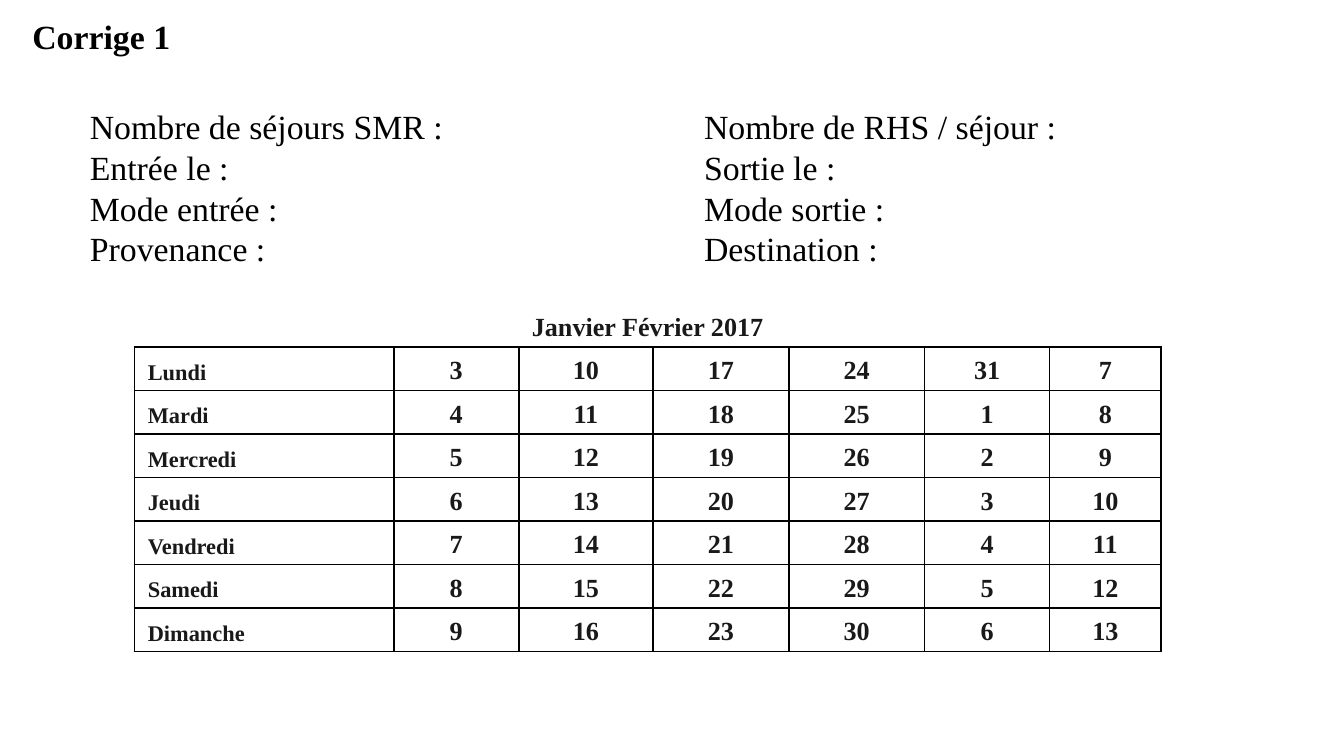
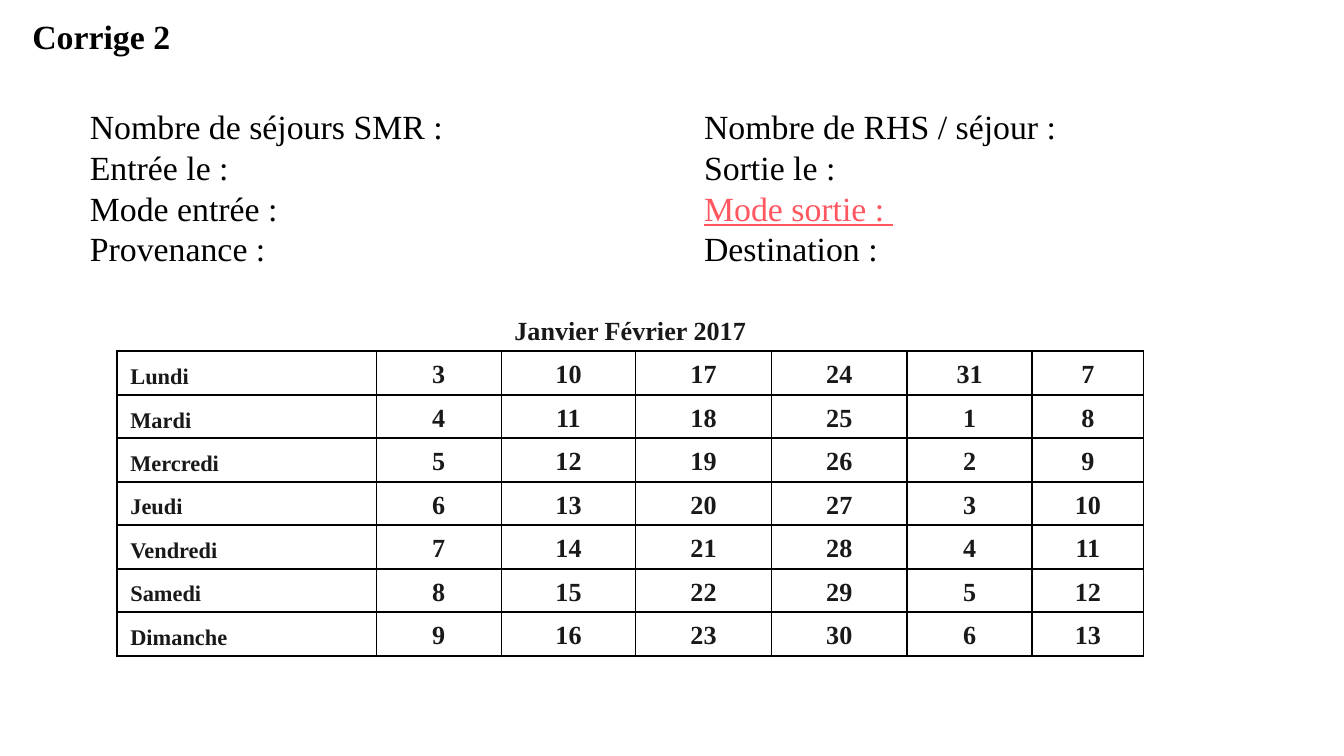
from lxml.etree import SubElement
from pptx import Presentation
from pptx.dml.color import RGBColor
from pptx.enum.text import MSO_ANCHOR, MSO_AUTO_SIZE, PP_ALIGN
from pptx.oxml.ns import qn
from pptx.util import Inches, Pt

COLOURS = {"text": "000000", "calendar": "191919", "alert": "FF5660", "border": "000000"}
FONT = "Times New Roman"
BODY_SIZE = 18.1

DAYS = ["Lundi", "Mardi", "Mercredi", "Jeudi", "Vendredi", "Samedi", "Dimanche"]
WEEKS = 6
FIRST_DATE = 3
DAYS_IN_MONTH = 31
COLUMN_WIDTHS = [1.93, 0.93, 1, 1.01, 1.01, 0.93, 0.83]
CALENDAR_HEIGHT = 2.59

ENTRY_LABELS = ["Nombre de séjours SMR :", "Entrée le :", "Mode entrée :", "Provenance :"]
EXIT_LABELS = ["Nombre de RHS / séjour :", "Sortie le :", "Mode sortie : ", "Destination :"]


def write(paragraph, text, size=BODY_SIZE, colour="text", bold=False,
          underline=False, align=PP_ALIGN.LEFT, hanging=0):
    run = paragraph.add_run()
    run.text = text
    run.font.name = FONT
    run.font.size = Pt(size)
    run.font.bold = bold
    run.font.underline = underline
    run.font.color.rgb = RGBColor.from_string(COLOURS[colour])
    paragraph.alignment = align
    if hanging:
        properties = paragraph._p.get_or_add_pPr()
        properties.set("marL", str(Inches(hanging)))
        properties.set("indent", str(-Inches(hanging)))


def set_borders(cell, visible_sides):
    """Draw the given sides (letters of LRTB) and clear the others."""
    properties = cell._tc.get_or_add_tcPr()
    for side in "LRTB":
        line = SubElement(properties, qn(f"a:ln{side}"), w=str(Pt(1)))
        if side in visible_sides:
            fill = SubElement(line, qn("a:solidFill"))
            SubElement(fill, qn("a:srgbClr"), val=COLOURS["border"])
        else:
            SubElement(line, qn("a:noFill"))


class Deck:
    def __init__(self):
        self.presentation = Presentation()
        self.presentation.slide_width = Inches(10)
        self.presentation.slide_height = Inches(10 * 9 / 16)
        self.slide = None

    def add_slide(self, heading):
        self.slide = self.presentation.slides.add_slide(self.presentation.slide_layouts[5])
        title = self.slide.shapes.title
        title.left, title.top = Inches(0.14), Inches(0.07)
        title.width, title.height = Inches(1.24), Inches(0.41)
        frame = title.text_frame
        frame.word_wrap = False
        frame.auto_size = MSO_AUTO_SIZE.SHAPE_TO_FIT_TEXT
        frame.vertical_anchor = MSO_ANCHOR.TOP
        write(frame.paragraphs[0], heading, bold=True)

    def add_labels(self, left, width, labels, wrap, alert=None):
        box = self.slide.shapes.add_textbox(Inches(left), Inches(0.74), Inches(width), Inches(1.32))
        frame = box.text_frame
        frame.word_wrap = wrap
        frame.auto_size = MSO_AUTO_SIZE.SHAPE_TO_FIT_TEXT
        for index, label in enumerate(labels):
            paragraph = frame.add_paragraph() if index else frame.paragraphs[0]
            is_alert = label == alert
            write(paragraph, label, colour="alert" if is_alert else "text", underline=is_alert)

    def write_cell(self, cell, text, size=14, align=PP_ALIGN.CENTER):
        cell.vertical_anchor = MSO_ANCHOR.BOTTOM
        write(cell.text_frame.paragraphs[0], text, size=size, colour="calendar",
              bold=True, align=align, hanging=0.38)

    def add_calendar(self, left, top):
        row_count = len(DAYS) + 1
        frame = self.slide.shapes.add_table(
            row_count, WEEKS + 1, Inches(left), Inches(top),
            Inches(sum(COLUMN_WIDTHS)), Inches(CALENDAR_HEIGHT))
        calendar = frame.table
        calendar.first_row = calendar.horz_banding = False
        for column, width in zip(calendar.columns, COLUMN_WIDTHS):
            column.width = Inches(width)
        for row in calendar.rows:
            row.height = Inches(CALENDAR_HEIGHT / row_count)
        calendar.cell(0, 0).merge(calendar.cell(0, WEEKS))
        for index, cell in enumerate(calendar.iter_cells()):
            set_borders(cell, "B" if index <= WEEKS else "LRTB")
            cell.fill.background()
            cell.margin_top = cell.margin_bottom = Inches(0 if cell.is_spanned else 0.04)

        self.write_cell(calendar.cell(0, 0), "Janvier Février 2017")
        for day, name in enumerate(DAYS):
            self.write_cell(calendar.cell(day + 1, 0), name, size=12, align=PP_ALIGN.LEFT)
            for week in range(WEEKS):
                date = (FIRST_DATE - 1 + day + len(DAYS) * week) % DAYS_IN_MONTH + 1
                self.write_cell(calendar.cell(day + 1, week + 1), str(date))


def main():
    deck = Deck()
    answers = [
        ("Corrige 1", 2.85, None, (1, 2.26)),
        ("Corrige 2", 2.98, EXIT_LABELS[2], (0.87, 2.29)),
    ]
    for heading, exit_width, alert, calendar_corner in answers:
        deck.add_slide(heading)
        deck.add_labels(0.57, 3.36, ENTRY_LABELS, wrap=True)
        deck.add_labels(5.14, exit_width, EXIT_LABELS, wrap=False, alert=alert)
        deck.add_calendar(*calendar_corner)
    deck.presentation.save("out.pptx")


if __name__ == "__main__":
    main()
